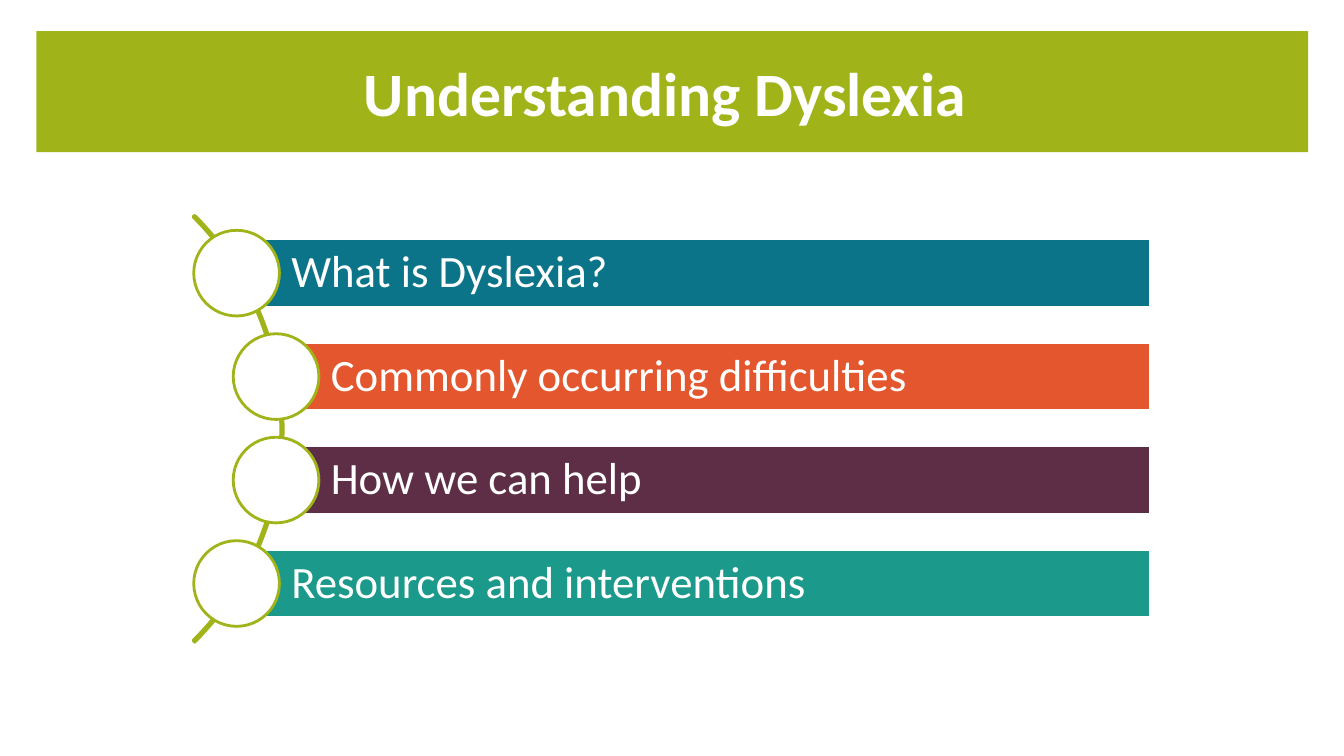
from pptx import Presentation
from pptx.dml.color import RGBColor
from pptx.enum import shapes, text
from pptx.oxml import parse_xml
from pptx.oxml.ns import nsdecls
from pptx.util import Pt

HUES = {"green": "A0B419", "teal": "0C7489", "orange": "E4572E",
        "plum": "5D2E46", "jade": "1B998B", "white": "FFFFFF"}
KIND = shapes.MSO_SHAPE


class Board:
    """Holds the text style and the current slide."""

    font = {"name": "Calibri", "size": Pt(32), "bold": False}
    frame = {"word_wrap": True, "auto_size": text.MSO_AUTO_SIZE.NONE,
             "vertical_anchor": text.MSO_ANCHOR.MIDDLE}

    def __init__(self, slide):
        self.slide = slide

    def color(self, name):
        return RGBColor.from_string(HUES[name])

    def apply(self, item, values):
        for key, value in values.items():
            setattr(item, key, value)

    def paint(self, shape, fill=None, line=None):
        for part, hue in ((shape.fill, fill), (shape.line.fill, line)):
            if hue:
                part.solid()
                part.fore_color.rgb = self.color(hue)
            else:
                part.background()
        if line:
            shape.line.width = Pt(2)

    def label(self, shape, words, align, frame={}, font={}, para={}):
        box = shape.text_frame
        self.apply(box, {**self.frame, **frame})
        line = box.paragraphs[0]
        self.apply(line, {"alignment": align, **para})
        run = line.add_run()
        run.text = words
        self.apply(run.font, {**self.font, **font})
        run.font.color.rgb = self.color("white")

    def shape(self, kind, left, top, width, height, fill=None, line=None):
        shape = self.slide.shapes.add_shape(
            kind, Pt(left), Pt(top), Pt(width), Pt(height))
        shape.shadow.inherit = False
        self.paint(shape, fill, line)
        return shape

    def title(self, words, left, top, width, height):
        head = self.slide.shapes.title
        self.apply(head, {"left": Pt(left), "top": Pt(top),
                          "width": Pt(width), "height": Pt(height)})
        # Rounded outline for the placeholder
        head._element.spPr.append(parse_xml(
            f'<a:prstGeom {nsdecls("a")} prst="roundRect"><a:avLst/></a:prstGeom>'))
        self.paint(head, "green")
        self.label(head, words, text.PP_ALIGN.CENTER,
                   font={"size": Pt(44), "bold": True})

    def arc(self, left, top, size):
        arc = self.shape(KIND.BLOCK_ARC, left, top, size, size, line="green")
        for spot, value in enumerate((189, 27, 0.004)):
            arc.adjustments[spot] = value

    def topic(self, words, hue, left, top, right):
        bar = self.shape(KIND.RECTANGLE, left, top, right - left, 49, hue, "white")
        self.label(bar, words, text.PP_ALIGN.LEFT,
                   {"margin_left": Pt(38.9), "margin_right": Pt(6.4),
                    "margin_top": Pt(6.4), "margin_bottom": Pt(6.4)},
                   para={"line_spacing": 0.9})
        self.shape(KIND.OVAL, left - 30.8, top - 6.1, 61.2, 61.2, "white", "green")


def main():
    deck = Presentation()
    deck.slide_width, deck.slide_height = Pt(960), Pt(540)
    board = Board(deck.slides.add_slide(deck.slide_layouts[5]))

    # Heading
    board.title("Understanding Dyslexia ", 26, 22.3, 908.5, 86.4)

    # Curve behind the topics
    board.arc(-229, 90.6, 431.3)

    # Topics, the middle two set further in along the curve
    topics = [("What is Dyslexia?", "teal"),
              ("Commonly occurring difficulties", "orange"),
              ("How we can help", "plum"),
              ("Resources and interventions", "jade")]
    for row, (words, hue) in enumerate(topics):
        left = 197.4 if row in (1, 2) else 169.2
        board.topic(words, hue, left, 170.6 + 73.9 * row, 821.5)

    deck.save("out.pptx")


if __name__ == "__main__":
    main()
